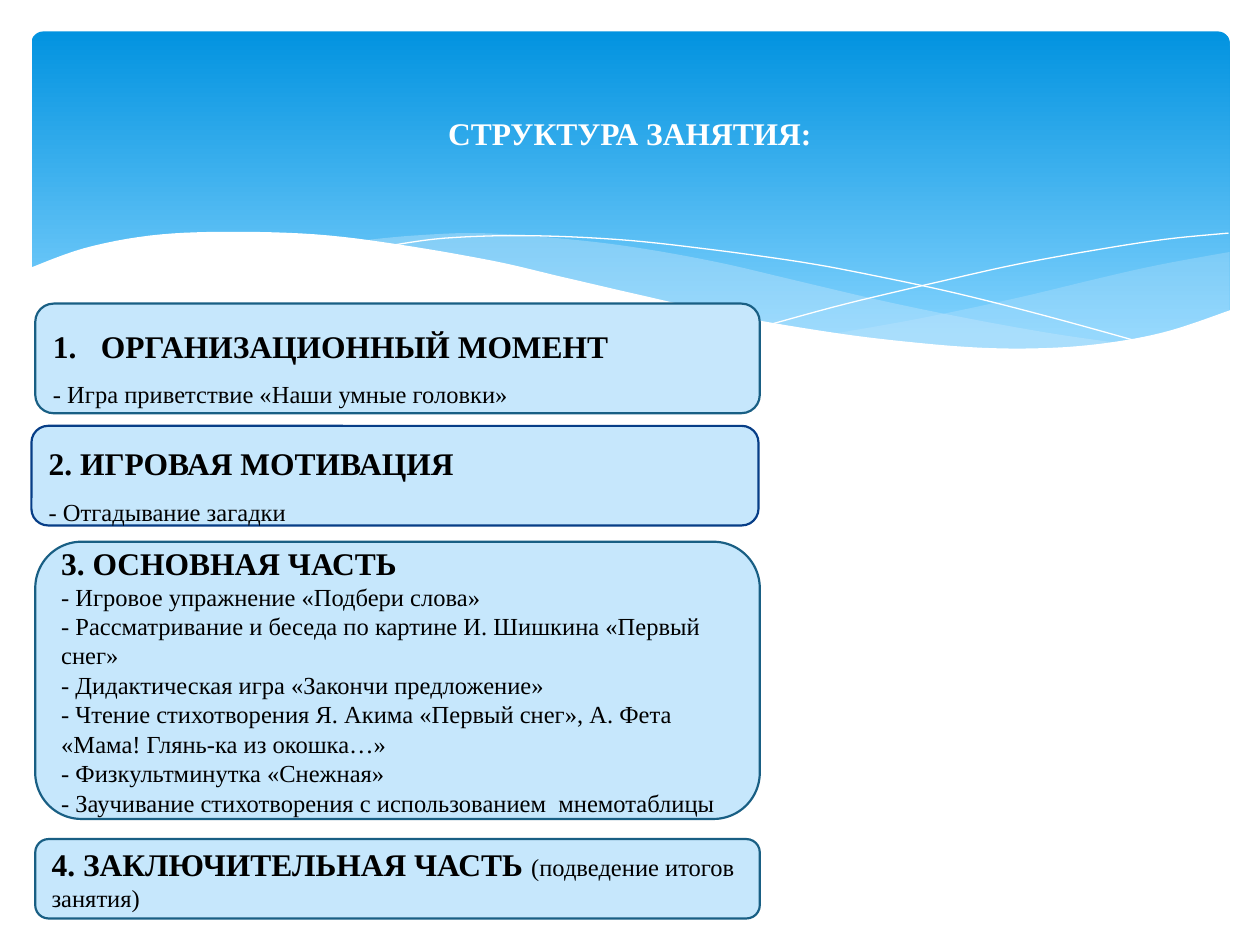
from dataclasses import dataclass
from lxml import etree
from pptx import Presentation
from pptx.dml.color import RGBColor
from pptx.enum.shapes import MSO_SHAPE
from pptx.enum.text import MSO_ANCHOR, PP_ALIGN
from pptx.oxml.ns import qn
from pptx.util import Inches, Pt

ROUND = MSO_SHAPE.ROUNDED_RECTANGLE
MIDDLE = MSO_ANCHOR.MIDDLE
LEFT, CENTER = PP_ALIGN.LEFT, PP_ALIGN.CENTER
COLS, ROWS = 100, 75


@dataclass(frozen=True)
class Theme:
    font: str = "Times New Roman"
    head: int = 18
    text: int = 14
    edge: float = 1.25
    white: str = "FFFFFF"
    black: str = "000000"
    pale: str = "C6E7FC"
    teal: str = "195F84"
    navy: str = "073E87"
    deep: str = "0293E0"
    sky: str = "83D3FE"


def color(code):
    return RGBColor.from_string(code)


def curve(knots, steps=6):
    ends = [knots[0], *knots, knots[-1]]
    points = [knots[0]]
    for a, b, c, d in zip(ends, ends[1:], ends[2:], ends[3:]):
        for step in range(1, steps + 1):
            t = step / steps
            points.append(tuple(
                q + t * (r - p) / 2
                + t * t * (2 * p - 5 * q + 4 * r - s) / 2
                + t ** 3 * (3 * q - p - 3 * r + s) / 2
                for p, q, r, s in zip(a, b, c, d)))
    return points


class Deck:
    def __init__(self, theme):
        self.theme = theme
        self.file = Presentation()
        self.file.slide_width, self.file.slide_height = Inches(10), Inches(7.5)
        self.col = self.file.slide_width / COLS
        self.row = self.file.slide_height / ROWS
        self.slide = self.file.slides.add_slide(self.file.slide_layouts[5])

    def place(self, at):
        x, y, w, h = at
        return (round(x * self.col), round(y * self.row),
                round(w * self.col), round(h * self.row))

    def style(self, run, size, bold, code):
        run.font.name, run.font.size, run.font.bold = self.theme.font, Pt(size), bold
        run.font.color.rgb = color(code)

    def panel(self, at, bend):
        shape = self.slide.shapes.add_shape(ROUND, *self.place(at))
        shape.shadow.inherit = False
        shape.adjustments[0] = bend
        return shape

    def banner(self, at):
        shape = self.panel(at, 0.034)
        shape.line.fill.background()
        shape.fill.gradient()
        shape.fill.gradient_angle = 270
        stops = zip(shape.fill.gradient_stops, (0, 0.9), (self.theme.deep, self.theme.sky))
        for stop, spot, code in stops:
            stop.position, stop.color.rgb = spot, color(code)

    def trace(self, points, closed):
        spots = [(x * self.col, y * self.row) for x, y in points]
        pen = self.slide.shapes.build_freeform(*spots[0])
        pen.add_line_segments(spots[1:], close=closed)
        shape = pen.convert_to_shape()
        shape.shadow.inherit = False
        return shape

    def wave(self, points, code, alpha=100):
        shape = self.trace(points, True)
        shape.line.fill.background()
        shape.fill.solid()
        shape.fill.fore_color.rgb = color(code)
        if alpha < 100:
            tint = shape.fill._xPr.find(".//" + qn("a:srgbClr"))
            etree.SubElement(tint, qn("a:alpha"), val=str(alpha * 1000))

    def thread(self, points):
        shape = self.trace(points, False)
        shape.fill.background()
        shape.line.color.rgb = color(self.theme.white)
        shape.line.width = Pt(0)

    def title(self, at, text):
        shape = self.slide.shapes.title
        shape.left, shape.top, shape.width, shape.height = self.place(at)
        frame = shape.text_frame
        frame.text = text
        frame.vertical_anchor = MIDDLE
        frame.paragraphs[0].alignment = CENTER
        self.style(frame.paragraphs[0].runs[0], self.theme.head, True, self.theme.white)
        self.slide.shapes._spTree.append(shape._element)

    def box(self, at, head, lines=(), edge=None, gap=1, auto=False, tail=""):
        look = self.theme
        shape = self.panel(at, 0.1667)
        shape.fill.solid()
        shape.fill.fore_color.rgb = color(look.pale)
        shape.line.color.rgb = color(edge or look.teal)
        shape.line.width = Pt(look.edge)
        frame = shape.text_frame
        frame.word_wrap = True
        frame.vertical_anchor = MIDDLE
        frame.margin_top = frame.margin_bottom = 0
        frame.text = "\n".join([head, *lines])
        for part in frame.paragraphs:
            part.alignment, part.line_spacing = LEFT, gap
            self.style(part.runs[0], look.text, False, look.black)
        first = frame.paragraphs[0]
        self.style(first.runs[0], look.head, True, look.black)
        if tail:
            run = first.add_run()
            run.text = tail
            self.style(run, look.text, False, look.black)
        if auto:
            props = first._p.get_or_add_pPr()
            props.set("marL", str(Inches(0.38)))
            props.set("indent", str(-Inches(0.38)))
            etree.SubElement(props, qn("a:buFont"), typeface="+mj-lt")
            etree.SubElement(props, qn("a:buAutoNum"), type="arabicPeriod")


def main():
    theme = Theme()
    deck = Deck(theme)
    deck.banner((2.5, 2.5, 95.1, 27))

    deck.wave(
        curve([(66.1, 26.5), (72.9, 25.3), (80.5, 23.7), (87.6, 22), (92.1, 21), (97.6, 20)])
        + curve([(97.6, 24.7), (93.5, 26.2), (88.9, 27.2), (83.5, 27.7), (78.1, 27.7),
                 (71.9, 27.2), (66.1, 26.5)]), theme.pale, 29)
    deck.wave(
        curve([(28.6, 19.1), (32.8, 18.7), (38, 18.5), (44.2, 18.9), (50.2, 19.6),
               (56.9, 20.8), (62.9, 22.2), (70.6, 24), (77.5, 25.4), (83.7, 26.5), (89.3, 27.3)])
        + curve([(89.3, 27.3), (83.8, 27.8), (78.5, 27.8), (72.2, 27.4), (65, 26.4),
                 (58.4, 25.2), (49.1, 23.2), (42.7, 21.6), (36.2, 20.3), (28.6, 19.1)]),
        theme.pale, 40)
    deck.thread(curve([(30.9, 19.5), (35.3, 18.9), (41.6, 18.7), (48.9, 19), (55.6, 19.7),
                       (63.6, 20.8), (69.5, 21.9), (76, 23.3), (83.1, 25.1), (90.7, 27.2)]))
    deck.thread(curve([(61.3, 25.7), (67.2, 24.1), (74.8, 22.3), (80.6, 21), (86.6, 19.9),
                       (92.4, 19), (97.5, 18.5)]))
    deck.wave(
        curve([(2.3, 21.3), (6.7, 19.7), (11.9, 18.7), (17.7, 18.4), (25, 18.6), (31.6, 19.4),
               (39.1, 20.7), (44.7, 22), (50.3, 23.3), (57.9, 25), (64.8, 26.2), (70.8, 27),
               (77.8, 27.6), (83.7, 27.6), (88.7, 27.1), (93, 26.2), (97.7, 24.6)])
        + [(97.7, 32.9), (2.3, 32.9)], theme.white)

    deck.title((5, 3.7, 90, 13.7), "СТРУКТУРА ЗАНЯТИЯ:")
    deck.box((2.8, 24.1, 57.5, 8.7), "ОРГАНИЗАЦИОННЫЙ МОМЕНТ",
             ["- Игра приветствие «Наши умные головки»"], gap=1.5, auto=True)
    deck.box((2.8, 43, 57.5, 22), "3. ОСНОВНАЯ ЧАСТЬ", [
        "- Игровое упражнение «Подбери слова»",
        "- Рассматривание и беседа по картине И. Шишкина «Первый снег»",
        "- Дидактическая игра «Закончи предложение»",
        "- Чтение стихотворения Я. Акима «Первый снег», А. Фета «Мама! Глянь-ка из окошка…»",
        "- Физкультминутка «Снежная»",
        "- Заучивание стихотворения с использованием  мнемотаблицы"])
    deck.box((2.8, 66.6, 57.5, 6.3), "4. ЗАКЛЮЧИТЕЛЬНАЯ ЧАСТЬ ",
             tail="(подведение итогов занятия)")
    deck.box((2.5, 33.8, 57.7, 7.9), "2. ИГРОВАЯ МОТИВАЦИЯ",
             ["- Отгадывание загадки"], edge=theme.navy, gap=1.5)
    deck.file.save("out.pptx")


if __name__ == "__main__":
    main()
